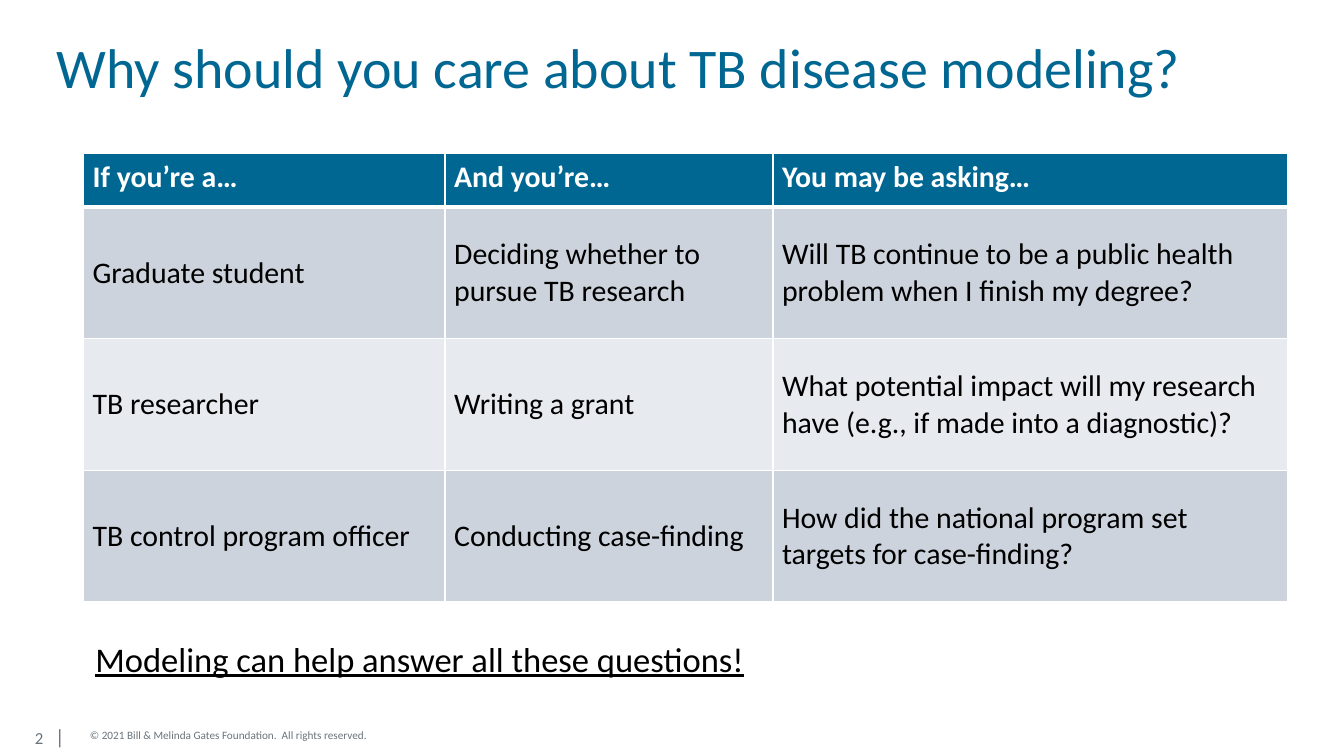
from lxml import etree
from pptx import Presentation
from pptx.dml.color import RGBColor
from pptx.enum.text import MSO_ANCHOR
from pptx.oxml.ns import qn
from pptx.util import Inches, Pt

TOP, MIDDLE = MSO_ANCHOR.TOP, MSO_ANCHOR.MIDDLE
FONT = "Calibri"
COLORS = {
    "teal": "006692",
    "gray": "6A737B",
    "black": "000000",
    "white": "FFFFFF",
    "dark_band": "CCD3DC",
    "light_band": "E7EAEE",
}
SLIDE_WIDTH = 10
SLIDE_HEIGHT = SLIDE_WIDTH * 9 / 16

TITLE = "Why should you care about TB disease modeling?"
TAKEAWAY = "Modeling can help answer all these questions!"
COPYRIGHT = "© 2021 Bill & Melinda Gates Foundation.  All rights reserved."
PAGE_NUMBER = "2"
AUDIENCES = [
    ("If you’re a…", "And you’re…", "You may be asking…"),
    ("Graduate student", "Deciding whether to pursue TB research",
     "Will TB continue to be a public health problem when I finish my degree?"),
    ("TB researcher", "Writing a grant",
     "What potential impact will my research have (e.g., if made into a diagnostic)?"),
    ("TB control program officer", "Conducting case-finding",
     "How did the national program set targets for case-finding?"),
]
COLUMN_WIDTHS = [2.69, 2.44, 3.83]
HEADER_HEIGHT, BODY_HEIGHT = 0.4, 0.98


def style(font, size, color, bold=False):
    font.name = FONT
    font.size = Pt(size)
    font.bold = bold
    font.color.rgb = RGBColor.from_string(COLORS[color])


def set_margins(target, side, end):
    target.margin_left = target.margin_right = Inches(side)
    target.margin_top = target.margin_bottom = Inches(end)


def add_text(slide, place, text, size, color, margins=(0.09, 0.04), anchor=MIDDLE):
    """Add a one-paragraph text box and return the paragraph."""
    frame = slide.shapes.add_textbox(*map(Inches, place)).text_frame
    frame.word_wrap = True
    frame.vertical_anchor = anchor
    set_margins(frame, *margins)
    frame.text = text
    paragraph = frame.paragraphs[0]
    for run in paragraph.runs:
        style(run.font, size, color)
    return paragraph


def add_page_number(slide):
    paragraph = add_text(slide, (0.2, 5.27, 0.47, 0.41), PAGE_NUMBER + "\t",
                         9, "gray", (0.06, 0.03))
    tabs = etree.SubElement(paragraph._p.get_or_add_pPr(), qn("a:tabLst"))
    etree.SubElement(tabs, qn("a:tab"), pos=str(Inches(0.15)), algn="l")
    divider = paragraph.add_run()
    divider.text = "|"
    style(divider.font, 11, "gray")


def set_borders(cell, top, bottom):
    """Draw white borders; top and bottom are widths in points."""
    properties = cell._tc.get_or_add_tcPr()
    widths = {"lnL": 1, "lnR": 1, "lnT": top, "lnB": bottom}
    for position, (side, width) in enumerate(widths.items()):
        line = etree.Element(qn("a:" + side), w=str(Pt(width)))
        fill = etree.SubElement(line, qn("a:solidFill"))
        etree.SubElement(fill, qn("a:srgbClr"), val=COLORS["white"])
        properties.insert(position, line)


def add_audience_table(slide):
    heights = [HEADER_HEIGHT] + [BODY_HEIGHT] * (len(AUDIENCES) - 1)
    table = slide.shapes.add_table(
        len(AUDIENCES), len(COLUMN_WIDTHS), Inches(0.62), Inches(1.14),
        Inches(sum(COLUMN_WIDTHS)), Inches(sum(heights))).table
    for column, width in zip(table.columns, COLUMN_WIDTHS):
        column.width = Inches(width)
    for r, (row, height, texts) in enumerate(zip(table.rows, heights, AUDIENCES)):
        row.height = Inches(height)
        header = r == 0
        band = "teal" if header else "dark_band" if r % 2 else "light_band"
        for cell, text in zip(row.cells, texts):
            cell.text = text
            cell.vertical_anchor = TOP if header else MIDDLE
            set_margins(cell, 0.07, 0.04)
            cell.fill.solid()
            cell.fill.fore_color.rgb = RGBColor.from_string(COLORS[band])
            set_borders(cell, top=3 if r == 1 else 1, bottom=3 if header else 1)
            style(cell.text_frame.paragraphs[0].runs[0].font, 16,
                  "white" if header else "black", bold=header)


def main():
    deck = Presentation()
    deck.slide_width, deck.slide_height = Inches(SLIDE_WIDTH), Inches(SLIDE_HEIGHT)
    slide = deck.slides.add_slide(deck.slide_layouts[6])

    add_page_number(slide)
    add_text(slide, (0.61, 5.37, 3.17, 0.3), COPYRIGHT, 6, "gray", (0.06, 0.05), TOP)
    add_text(slide, (0.33, 0.2, 8.62, 0.65), TITLE, 30, "teal", anchor=TOP)
    takeaway = add_text(slide, (0.62, 4.65, 8.62, 0.45), TAKEAWAY, 18.5, "black")
    takeaway.line_spacing = 1.15
    takeaway.runs[0].font.underline = True
    add_audience_table(slide)

    deck.save("out.pptx")


if __name__ == "__main__":
    main()
